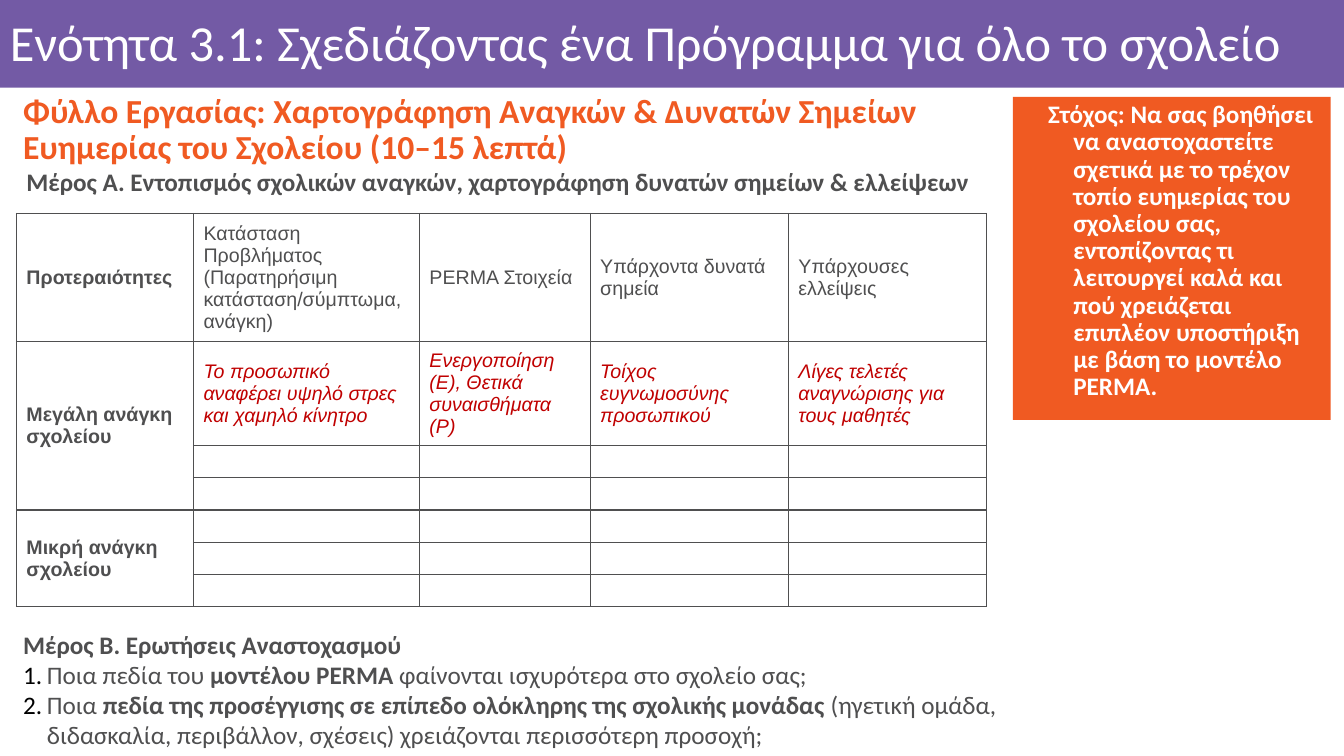
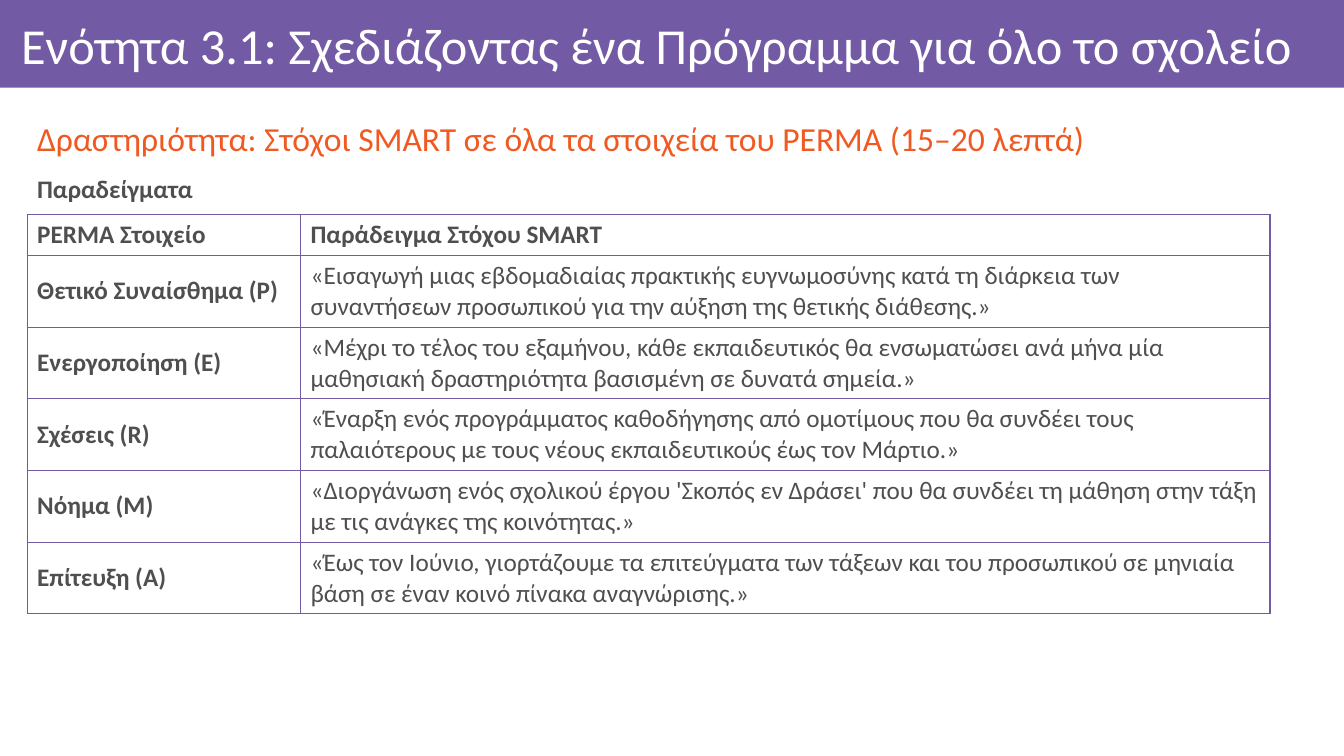
from dataclasses import dataclass
from typing import Optional

from lxml import etree
from pptx import Presentation
from pptx.dml.color import RGBColor
from pptx.enum import shapes, text
from pptx.oxml import ns
from pptx.util import Pt

PURPLE = RGBColor(0x73, 0x5A, 0xA5)
ORANGE = RGBColor(0xF0, 0x5A, 0x22)
GREY = RGBColor(0x4F, 0x4F, 0x50)
RED = RGBColor(0xC0, 0x00, 0x00)
WHITE = RGBColor(0xFF, 0xFF, 0xFF)

WIDTH, HEIGHT = 960, 540
TITLE = "Ενότητα 3.1: Σχεδιάζοντας ένα Πρόγραμμα για όλο το σχολείο"
MIDDLE = text.MSO_ANCHOR.MIDDLE


@dataclass(frozen=True)
class Font:
    size: float
    color: RGBColor = GREY
    bold: bool = False
    slant: bool = False
    face: str = "Calibri"


@dataclass(frozen=True)
class Box:
    left: float
    top: float
    width: float
    height: float

    def lengths(self) -> tuple:
        return Pt(self.left), Pt(self.top), Pt(self.width), Pt(self.height)


@dataclass(frozen=True)
class Run:
    words: str
    font: Font


@dataclass(frozen=True)
class Cell:
    row: int
    col: int
    run: Run
    span: int = 1


HEAD = Font(36, WHITE)
TOPIC = Font(24, ORANGE)
PLAIN = Font(18)
BOLD = Font(18, bold=True)
GOAL = Font(18, WHITE, bold=True)
GRID = Font(14, face="Arial")
LABEL = Font(14, bold=True, face="Arial")
SAMPLE = Font(14, RED, slant=True, face="Arial")


def write(para, *runs: Run, line: Optional[float] = None) -> None:
    """Add the runs; a newline within a run becomes a line break."""
    if line:
        para.line_spacing = line
    for run in runs:
        for index, words in enumerate(run.words.split("\n")):
            if index:
                para.add_line_break()
            part = para.add_run()
            part.text = words
            font, look = part.font, run.font
            font.name, font.size = look.face, Pt(look.size)
            font.bold, font.italic = look.bold, look.slant
            font.color.rgb = look.color


def hang(para, left: float, first: float) -> etree._Element:
    """Set the left margin and first line indent, and return the properties."""
    props = para._p.get_or_add_pPr()
    props.set("marL", str(Pt(left)))
    props.set("indent", str(Pt(first)))
    return props


def number(para) -> None:
    props = hang(para, 17, -17)
    color = etree.SubElement(props, ns.qn("a:buClr"))
    etree.SubElement(color, ns.qn("a:srgbClr"), val="000000")
    etree.SubElement(props, ns.qn("a:buFont"), typeface="Calibri")
    etree.SubElement(props, ns.qn("a:buAutoNum"), type="arabicPeriod")


def label(slide, box: Box, *runs: Run, line: Optional[float] = None,
          anchor=text.MSO_ANCHOR.TOP):
    frame = slide.shapes.add_textbox(*box.lengths()).text_frame
    frame.word_wrap = True
    frame.vertical_anchor = anchor
    write(frame.paragraphs[0], *runs, line=line)
    return frame


def panel(slide, box: Box, color: RGBColor):
    shape = slide.shapes.add_shape(shapes.MSO_SHAPE.RECTANGLE, *box.lengths())
    shape.shadow.inherit = False
    shape.fill.solid()
    shape.fill.fore_color.rgb = color
    shape.line.fill.background()
    return shape


def border(cell, color: RGBColor) -> None:
    props = cell._tc.get_or_add_tcPr()
    for index, side in enumerate(("lnL", "lnR", "lnT", "lnB")):
        line = etree.Element(ns.qn(f"a:{side}"), w=str(Pt(1)))
        fill = etree.SubElement(line, ns.qn("a:solidFill"))
        etree.SubElement(fill, ns.qn("a:srgbClr"), val=str(color))
        props.insert(index, line)


def draw_grid(slide, left: float, top: float, cols: list[float],
              rows: list[float], cells: list[Cell], color: RGBColor) -> None:
    box = Box(left, top, sum(cols), sum(rows))
    table = slide.shapes.add_table(len(rows), len(cols), *box.lengths()).table
    table.first_row = table.horz_banding = False
    for col, width in zip(table.columns, cols):
        col.width = Pt(width)
    for row, height in zip(table.rows, rows):
        row.height = Pt(height)
    for cell in table.iter_cells():
        cell.fill.background()
        cell.vertical_anchor = MIDDLE
        border(cell, color)
    for item in cells:
        cell = table.cell(item.row, item.col)
        if item.span > 1:
            cell.merge(table.cell(item.row + item.span - 1, item.col))
        write(cell.text_frame.paragraphs[0], item.run)
    for cell in table.iter_cells():
        if not cell.text:
            # An empty cell's end mark sets the least height of its row.
            mark = cell.text_frame.paragraphs[0]._p.get_or_add_endParaRPr()
            mark.set("sz", "1200")


def start(deck, left: float, top: float):
    """Add a slide with the shared band and title."""
    slide = deck.slides.add_slide(deck.slide_layouts[6])
    panel(slide, Box(0, 0, WIDTH, 62.7), PURPLE)
    frame = label(slide, Box(left, top, 940, 56), Run(TITLE, HEAD),
                  line=0.9, anchor=MIDDLE)
    frame.margin_right = frame.margin_top = frame.margin_bottom = Pt(4.3)
    return slide


def draw_needs(deck) -> None:
    slide = start(deck, 0, 4.5)
    label(slide, Box(9.4, 72, 674, 43),
          Run("Φύλλο Εργασίας: Χαρτογράφηση Αναγκών & Δυνατών Σημείων \n"
              "Ευημερίας του Σχολείου (10–15 λεπτά)",
              Font(24, ORANGE, bold=True)), line=0.9, anchor=MIDDLE)
    label(slide, Box(11.7, 115.4, 696, 29),
          Run("Μέρος Α. Εντοπισμός σχολικών αναγκών, χαρτογράφηση δυνατών "
              "σημείων & ελλείψεων", BOLD))

    frame = panel(slide, Box(723.6, 69.2, 227, 230.8), ORANGE).text_frame
    frame.word_wrap = True
    frame.vertical_anchor = text.MSO_ANCHOR.TOP
    goal = frame.paragraphs[0]
    goal.alignment = text.PP_ALIGN.LEFT
    goal.space_before = Pt(10)
    hang(goal, 36, -18)
    write(goal, Run(
        "Στόχος: Να σας βοηθήσει να αναστοχαστείτε σχετικά με το τρέχον τοπίο "
        "ευημερίας του σχολείου σας, εντοπίζοντας τι λειτουργεί καλά και πού "
        "χρειάζεται επιπλέον υποστήριξη με βάση το μοντέλο PERMA.", GOAL),
        line=0.9)

    heads = ["Κατάσταση Προβλήματος (Παρατηρήσιμη κατάσταση/σύμπτωμα, ανάγκη)",
             "PERMA Στοιχεία", "Υπάρχοντα δυνατά σημεία",
             "Υπάρχουσες ελλείψεις"]
    samples = ["Το προσωπικό αναφέρει υψηλό στρες και χαμηλό κίνητρο",
               "Ενεργοποίηση (E), Θετικά συναισθήματα (P)",
               "Τοίχος ευγνωμοσύνης προσωπικού",
               "Λίγες τελετές αναγνώρισης για τους μαθητές"]
    cells = [Cell(0, 0, Run("Προτεραιότητες", LABEL)),
             Cell(1, 0, Run("Μεγάλη ανάγκη σχολείου", LABEL), 3),
             Cell(4, 0, Run("Μικρή ανάγκη σχολείου", LABEL), 3)]
    for row, (words, font) in enumerate(((heads, GRID), (samples, SAMPLE))):
        cells += [Cell(row, col, Run(item, font))
                  for col, item in enumerate(words, 1)]
    draw_grid(slide, 11.7, 152.4, [126.5, 161.4, 122, 141.6, 141.6],
              [85.7, 70] + [23.1] * 5, cells, GREY)

    frame = label(slide, Box(9.4, 445.7, 775, 94),
                  Run("Μέρος Β. Ερωτήσεις Αναστοχασμού", BOLD))
    tasks = [("Ποια πεδία του ", "μοντέλου PERMA ",
              "φαίνονται ισχυρότερα στο σχολείο σας;"),
             ("Ποια ", "πεδία της προσέγγισης σε επίπεδο ολόκληρης της "
              "σχολικής μονάδας ", "(ηγετική ομάδα, διδασκαλία, περιβάλλον, "
              "σχέσεις) χρειάζονται περισσότερη προσοχή;")]
    for task in tasks:
        para = frame.add_paragraph()
        number(para)
        write(para, *map(Run, task, (PLAIN, BOLD, PLAIN)))


def draw_goals(deck) -> None:
    slide = start(deck, 8, 6.5)
    frame = label(slide, Box(19.4, 79.2, 940, 43),
                  Run("Δραστηριότητα: Στόχοι SMART σε όλα τα στοιχεία του "
                      "PERMA (15–20 λεπτά)", TOPIC), line=0.9, anchor=MIDDLE)
    frame.paragraphs[0].alignment = text.PP_ALIGN.JUSTIFY
    label(slide, Box(19.4, 120.2, 484.6, 29), Run("Παραδείγματα", BOLD))

    goals = [
        ("PERMA Στοιχείο", "Παράδειγμα Στόχου SMART"),
        ("Θετικό Συναίσθημα (P)",
         "«Εισαγωγή μιας εβδομαδιαίας πρακτικής ευγνωμοσύνης κατά τη διάρκεια "
         "των συναντήσεων προσωπικού για την αύξηση της θετικής διάθεσης.»"),
        ("Ενεργοποίηση (E)",
         "«Μέχρι το τέλος του εξαμήνου, κάθε εκπαιδευτικός θα ενσωματώσει ανά "
         "μήνα μία μαθησιακή δραστηριότητα βασισμένη σε δυνατά σημεία.»"),
        ("Σχέσεις (R)",
         "«Έναρξη ενός προγράμματος καθοδήγησης από ομοτίμους που θα συνδέει "
         "τους παλαιότερους με τους νέους εκπαιδευτικούς έως τον Μάρτιο.»"),
        ("Νόημα (M)",
         "«Διοργάνωση ενός σχολικού έργου 'Σκοπός εν Δράσει' που θα συνδέει "
         "τη μάθηση στην τάξη με τις ανάγκες της κοινότητας.»"),
        ("Επίτευξη (A)",
         "«Έως τον Ιούνιο, γιορτάζουμε τα επιτεύγματα των τάξεων και του "
         "προσωπικού σε μηνιαία βάση σε έναν κοινό πίνακα αναγνώρισης.»"),
    ]
    cells = [Cell(row, col, Run(words, PLAIN if row and col else BOLD))
             for row, pair in enumerate(goals)
             for col, words in enumerate(pair)]
    draw_grid(slide, 19.4, 153.2, [195.3, 692.5], [29.3] + [51.2] * 5,
              cells, PURPLE)


def main() -> None:
    deck = Presentation()
    deck.slide_width, deck.slide_height = Pt(WIDTH), Pt(HEIGHT)
    draw_needs(deck)
    draw_goals(deck)
    deck.save("out.pptx")


if __name__ == "__main__":
    main()
